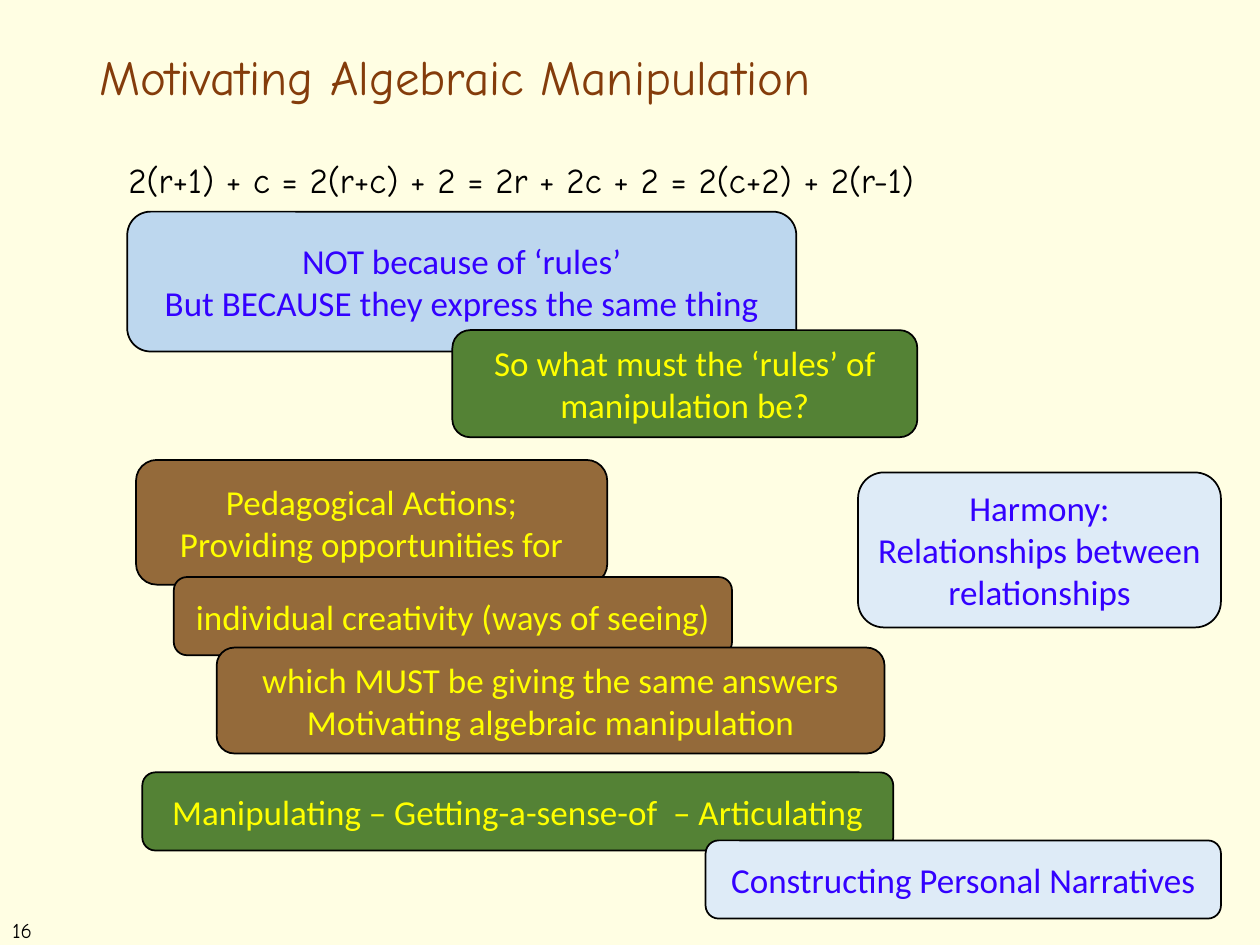
"""Build the slide on motivating algebraic manipulation."""
import pptx
import pptx.dml.color
import pptx.enum.shapes
import pptx.enum.text
import pptx.util
from pptx.util import Inches

COLORS = {
    "cream": "FFFEE3",
    "rust": "843C0B",
    "black": "000000",
    "brown": "946A3A",
    "green": "548235",
    "sky": "BDD7EE",
    "pale": "DEEBF7",
    "yellow": "FFFF00",
    "violet": "3301FF",
}
ANCHOR = pptx.enum.text.MSO_ANCHOR
ALIGN = pptx.enum.text.PP_ALIGN


def rgb(name):
    return pptx.dml.color.RGBColor.from_string(COLORS[name])


def write(shape, text, font, size, color, align, anchor, wrap=True):
    frame = shape.text_frame
    frame.text = text
    frame.word_wrap = wrap
    frame.vertical_anchor = anchor
    for para in frame.paragraphs:
        para.alignment = align
        for span in para.runs:
            span.font.name = font
            span.font.size = pptx.util.Pt(size)
            span.font.color.rgb = rgb(color)


deck = pptx.Presentation()
deck.slide_width = Inches(10)
deck.slide_height = Inches(7.5)
page = deck.slides.add_slide(deck.slide_layouts[6])
page.background.fill.solid()
page.background.fill.fore_color.rgb = rgb("cream")

labels = [
    ("16", 0, 7.23, 0.49, 0.3, 12, "black", ANCHOR.TOP, True),
    ("Motivating Algebraic Manipulation", 0.69, 0.4, 8.62, 0.47, 28, "rust", ANCHOR.MIDDLE, True),
    ("2(r+1) + c = 2(r+c) + 2 = 2r + 2c + 2 = 2(c+2) + 2(r-1)",
     0.92, 1.21, 7.07, 0.44, 20, "black", ANCHOR.TOP, False),
]
for text, left, top, width, height, size, color, anchor, wrap in labels:
    box = page.shapes.add_textbox(Inches(left), Inches(top), Inches(width), Inches(height))
    write(box, text, "Comic Neue", size, color, ALIGN.LEFT, anchor, wrap)
    if color == "rust":
        box.text_frame.paragraphs[0].line_spacing = 0.9

cards = [
    ("Pedagogical Actions;\nProviding opportunities for", 1.08, 3.65, 3.74, 0.99, "brown", "yellow"),
    ("individual creativity (ways of seeing)", 1.38, 4.58, 4.43, 0.62, "brown", "yellow"),
    ("Manipulating – Getting-a-sense-of  – Articulating", 1.13, 6.13, 5.96, 0.62, "green", "yellow"),
    ("Constructing Personal Narratives", 5.6, 6.67, 4.09, 0.62, "pale", "violet"),
    ("which MUST be giving the same answers\nMotivating algebraic manipulation",
     1.72, 5.14, 5.3, 0.84, "brown", "yellow"),
    ("NOT because of ‘rules’\nBut BECAUSE they express the same thing",
     1.01, 1.68, 5.31, 1.11, "sky", "violet"),
    ("So what must the ‘rules’ of manipulation be?", 3.59, 2.62, 3.69, 0.85, "green", "yellow"),
    ("Harmony:\nRelationships between relationships", 6.81, 3.75, 2.88, 1.23, "pale", "violet"),
]
for text, left, top, width, height, fill, color in cards:
    card = page.shapes.add_shape(
        pptx.enum.shapes.MSO_SHAPE.ROUNDED_RECTANGLE,
        Inches(left), Inches(top), Inches(width), Inches(height),
    )
    card.shadow.inherit = False
    card.fill.solid()
    card.fill.fore_color.rgb = rgb(fill)
    card.line.color.rgb = rgb("black")
    card.line.width = pptx.util.Pt(1)
    write(card, text, "Calibri", 20, color, ALIGN.CENTER, ANCHOR.MIDDLE)

deck.save("out.pptx")
